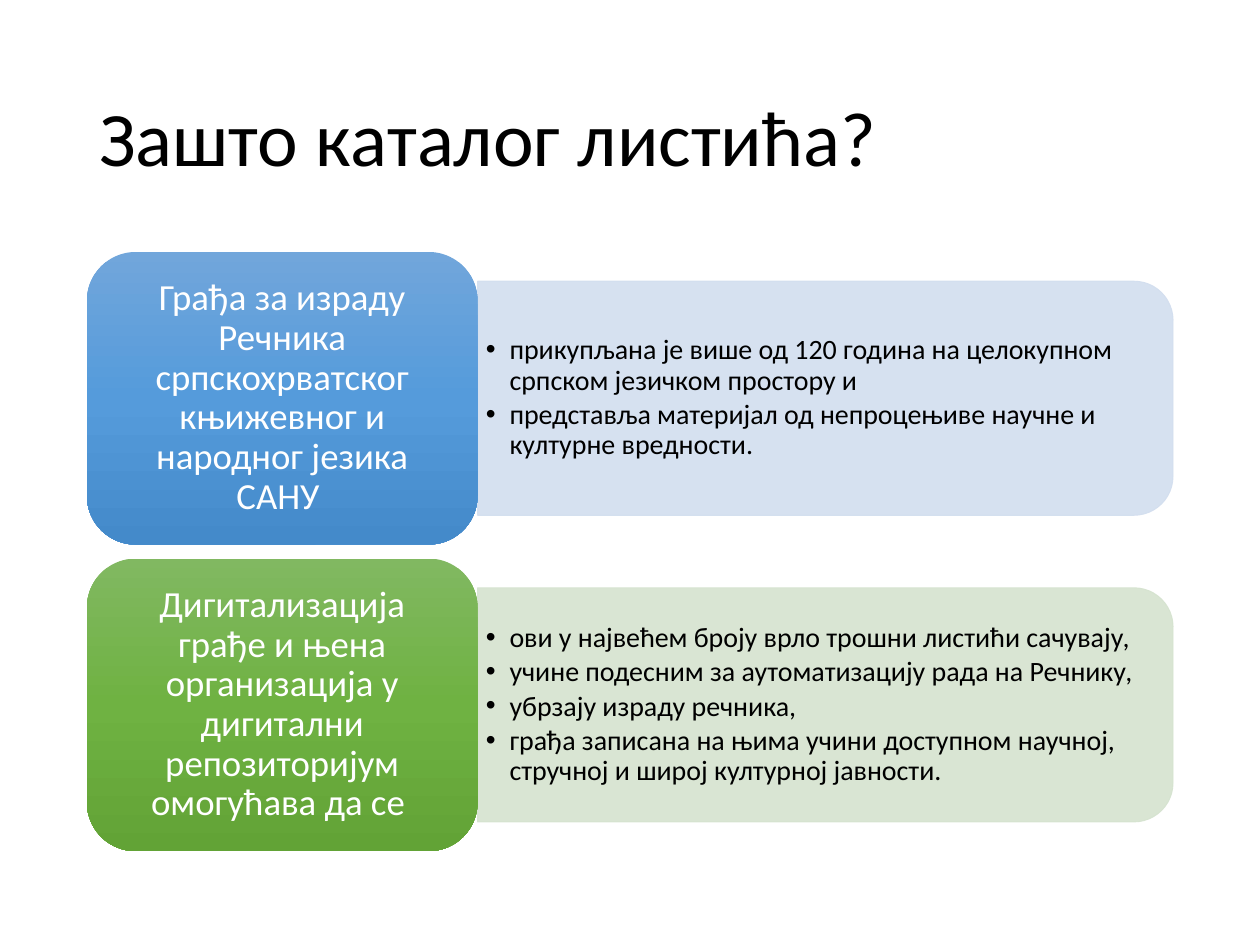
import copy

import pptx
import pptx.dml.color
import pptx.enum.shapes
import pptx.enum.text
import pptx.oxml
import pptx.oxml.ns
import pptx.util

Pt = pptx.util.Pt
SHAPE = pptx.enum.shapes.MSO_SHAPE
ALIGN = pptx.enum.text.PP_ALIGN
qn = pptx.oxml.ns.qn


def rgb(value):
    return pptx.dml.color.RGBColor.from_string(value)


def format_frame(tf, side, edge, size, color, align, after):
    tf.word_wrap = True
    tf.auto_size = pptx.enum.text.MSO_AUTO_SIZE.NONE
    tf.vertical_anchor = pptx.enum.text.MSO_ANCHOR.MIDDLE
    tf.margin_left = tf.margin_right = Pt(side)
    tf.margin_top = tf.margin_bottom = Pt(edge)
    for p in tf.paragraphs:
        p.alignment = align
        p.line_spacing = 0.9
        p.space_before = Pt(0)
        p.space_after = Pt(after)
        for r in p.runs:
            r.font.name = "Calibri"
            r.font.size = Pt(size)
            r.font.color.rgb = rgb(color)


rows = [
    ("Грађа за израду Речника српскохрватског књижевног и народног језика САНУ ",
     ["прикупљана је више од 120 година на целокупном српском језичком простору и",
      "представља материјал од непроцењиве научне и културне вредности."],
     "D2DEEF", ["71A6DB", "559BDB", "448ACA"]),
    ("Дигитализација грађе и њена организација у дигитални репозиторијум омогућава да се ",
     ["ови у највећем броју врло трошни листићи сачувају,",
      "учине подесним за аутоматизацију рада на Речнику,",
      "убрзају израду речника,",
      "грађа записана на њима учини доступном научној, стручној и широј културној јавности."],
     "D5E3CF", ["81B861", "6FB242", "62A336"]),
]
left, top, pitch = 49.7, 144, 175.2
card_w, card_h = 223.2, 167.2
panel_w, panel_h = 397.4, 133.8
list_h = 121

prs = pptx.Presentation()
prs.slide_width, prs.slide_height = Pt(720), Pt(540)
s = prs.slides.add_slide(prs.slide_layouts[3])

# Title
title = s.shapes.title
title.left, title.top, title.width, title.height = Pt(left), Pt(28.8), Pt(620.6), Pt(104.4)
title.text_frame.text = "Зашто каталог листића?"
format_frame(title.text_frame, 7.2, 3.6, 44, "000000", ALIGN.LEFT, 0)

for i, (heading, points, tint, stops) in enumerate(rows):
    middle = top + i * pitch + card_h / 2
    panel_x = left + card_w

    # Panel, turned so that its rounded corners face right
    panel = s.shapes.add_shape(
        SHAPE.ROUND_2_SAME_RECTANGLE,
        Pt(panel_x + (panel_w - panel_h) / 2), Pt(middle - panel_w / 2),
        Pt(panel_h), Pt(panel_w))
    panel.rotation = 90
    panel.shadow.inherit = False
    panel.fill.solid()
    panel.fill.fore_color.rgb = rgb(tint)
    panel.line.color.rgb = rgb(tint)
    panel.line.width = Pt(0.5)
    for clr in panel._element.spPr.iter(qn("a:srgbClr")):
        clr.append(pptx.oxml.parse_xml(
            '<a:alpha xmlns:a="http://schemas.openxmlformats.org/drawingml/2006/main" val="90000"/>'))

    # Bulleted list, brought in front of its panel
    body = s.placeholders[i + 1]
    body.left, body.top = Pt(panel_x), Pt(middle - list_h / 2)
    body.width, body.height = Pt(391), Pt(list_h)
    s.shapes._spTree.append(body._element)
    tf = body.text_frame
    tf.text = "\n".join(points)
    for p in tf.paragraphs:
        pPr = p._p.get_or_add_pPr()
        pPr.set("marL", str(Pt(13.5)))
        pPr.set("indent", str(Pt(-13.5)))
    format_frame(tf, 4.8, 2.4, 16, "000000", ALIGN.LEFT, 2.4)

    # Heading card with a three-stop gradient
    card = s.shapes.add_shape(SHAPE.ROUNDED_RECTANGLE, Pt(left), Pt(top + i * pitch),
                              Pt(card_w), Pt(card_h))
    card.shadow.inherit = False
    card.line.fill.background()
    card.fill.gradient()
    card.fill.gradient_angle = 270
    gs_list = next(card._element.spPr.iter(qn("a:gsLst")))
    gs_list.append(copy.deepcopy(gs_list[0]))
    for stop, color, position in zip(card.fill.gradient_stops, stops, (0, 0.5, 1)):
        stop.color.rgb = rgb(color)
        stop.position = position
    card.text_frame.text = heading
    format_frame(card.text_frame, 6.3, 3.15, 21, "FFFFFF", ALIGN.CENTER, 0)

prs.save("out.pptx")
